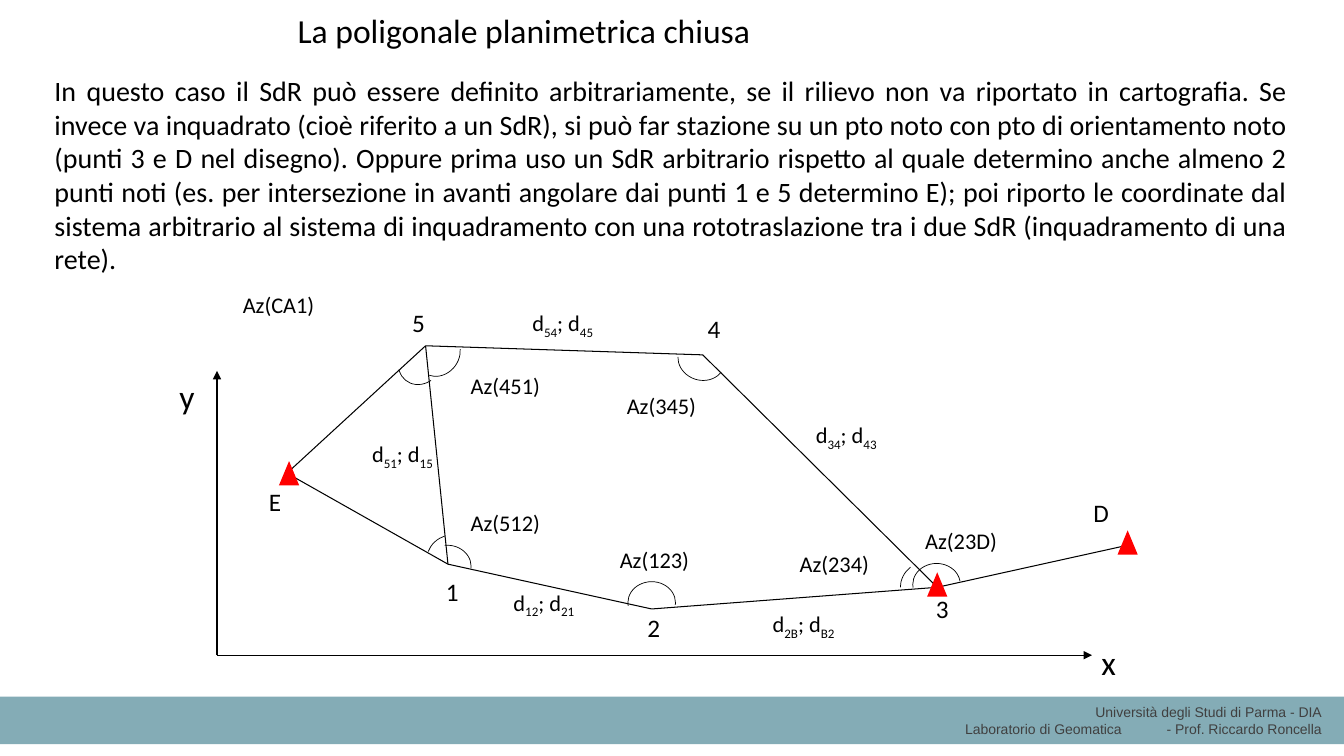
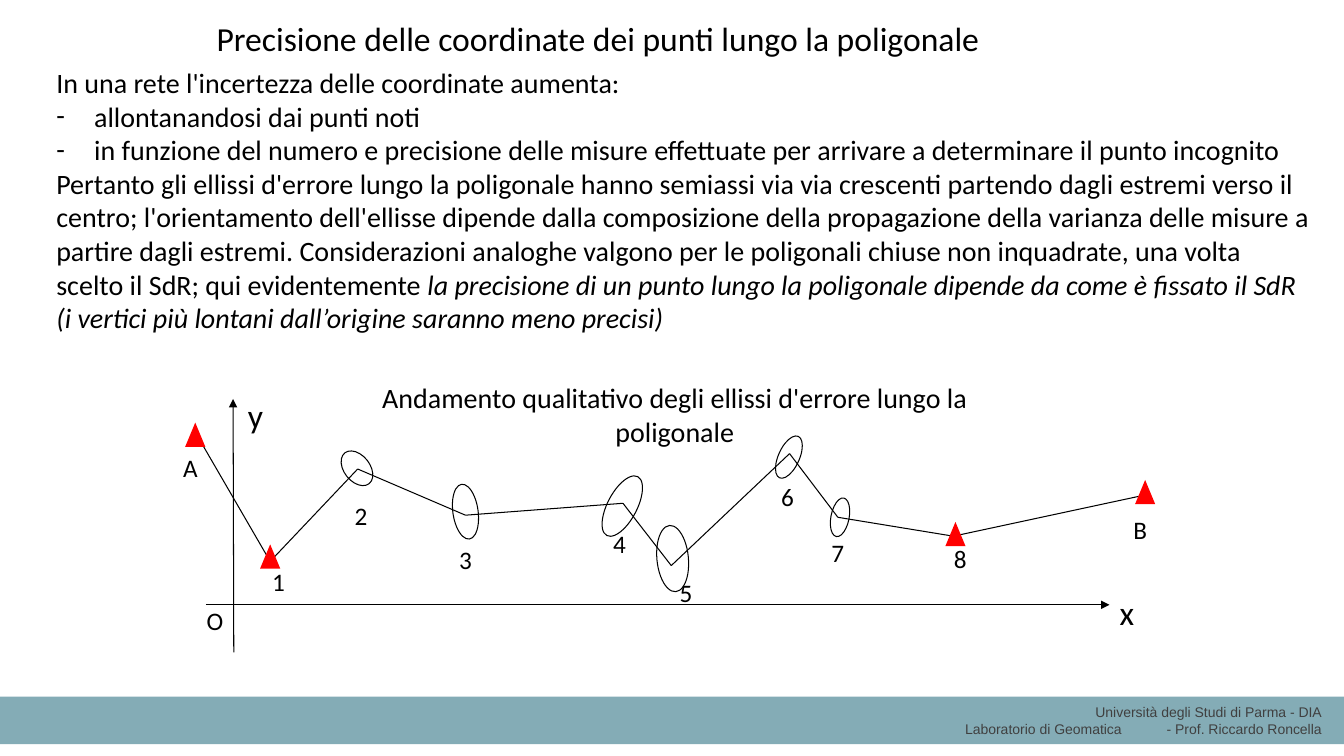
from lxml import etree
from pptx import Presentation
from pptx.dml.color import RGBColor
from pptx.enum import shapes as kinds, text as t
from pptx.oxml.ns import qn
from pptx.util import Pt

BLACK, RED, BAND, GREY = "000000", "FF0000", "84ACB6", "404040"
MAIN_FONT, FOOTER_FONT = "Calibri", "Arial"
WIDTH, HEIGHT = 960, 540
SHAPE = kinds.MSO_SHAPE
LEFT, CENTER = t.PP_ALIGN.LEFT, t.PP_ALIGN.CENTER
RIGHT, JUSTIFY = t.PP_ALIGN.RIGHT, t.PP_ALIGN.JUSTIFY


def rgb(color):
    return RGBColor.from_string(color)


def points(*values):
    return [Pt(value) for value in values]


def add_run(paragraph, words, size, color=BLACK, font=MAIN_FONT, italic=None, subscript=False):
    run = paragraph.add_run()
    run.text = words
    run.font.size, run.font.name, run.font.italic = Pt(size), font, italic
    run.font.color.rgb = rgb(color)
    if subscript:
        run.font._element.set("baseline", "-25000")


def set_indent(paragraph, bullet=None, indent=0):
    """Override the template's list style: hanging bullet, or none."""
    properties = paragraph._p.get_or_add_pPr()
    properties.set("marL", str(Pt(indent)))
    properties.set("indent", str(-Pt(indent)))
    if bullet:
        etree.SubElement(properties, qn("a:buFont")).set("typeface", MAIN_FONT)
        etree.SubElement(properties, qn("a:buChar")).set("char", bullet)
    else:
        etree.SubElement(properties, qn("a:buNone"))


def place(shape, box):
    shape.left, shape.top, shape.width, shape.height = points(*box)


def fill_title(slide, words, box, align):
    title = slide.shapes.title
    place(title, box)
    frame = title.text_frame
    frame.word_wrap, frame.vertical_anchor = False, t.MSO_ANCHOR.TOP
    frame.auto_size = t.MSO_AUTO_SIZE.NONE
    frame.paragraphs[0].alignment = align
    add_run(frame.paragraphs[0], words, 24)


def fill_body(slide, items, box, align):
    """Each item is a bullet (or None) and a list of (words, italic) runs."""
    body = slide.placeholders[1]
    place(body, box)
    frame = body.text_frame
    frame.word_wrap, frame.auto_size = True, t.MSO_AUTO_SIZE.NONE
    for number, (bullet, runs) in enumerate(items):
        paragraph = frame.add_paragraph() if number else frame.paragraphs[0]
        paragraph.space_before = Pt(0)
        set_indent(paragraph, bullet, 27 if bullet else 0)
        paragraph.alignment = align
        for words, italic in runs:
            add_run(paragraph, words, 20, italic=italic)


def add_footer(layout, slide):
    """Build the footer band on a slide and move it into the shared layout."""
    band = slide.shapes.add_shape(SHAPE.RECTANGLE, *points(0, 497.5, WIDTH, 34))
    band.shadow.inherit = False
    band.fill.solid()
    band.fill.fore_color.rgb = rgb(BAND)
    band.line.fill.background()
    credits = slide.shapes.add_textbox(*points(652.3, 499, 298.8, 31.7))
    frame = credits.text_frame
    frame.word_wrap = True
    lines = ["Università degli Studi di Parma - DIA",
             "Laboratorio di Geomatica\t- Prof. Riccardo Roncella"]
    for number, words in enumerate(lines):
        paragraph = frame.add_paragraph() if number else frame.paragraphs[0]
        paragraph.alignment = RIGHT
        add_run(paragraph, words, 10, GREY, FOOTER_FONT)
    for number, shape in enumerate((band, credits)):
        shape.element.nvSpPr.cNvPr.set("id", str(100 + number))
        layout.element.cSld.spTree.append(shape.element)


class Diagram:
    """A group of parts measured from the top left corner of its box."""

    def __init__(self, slide, left, top):
        self.shapes = slide.shapes.add_group_shape().shapes
        self.left, self.top = left, top

    def line(self, start, end, arrow=False):
        ends = [self.left + start[0], self.top + start[1], self.left + end[0], self.top + end[1]]
        line = self.shapes.add_connector(kinds.MSO_CONNECTOR.STRAIGHT, *points(*ends))
        line.line.color.rgb = rgb(BLACK)
        line.line.width = Pt(0.75)
        if arrow:
            etree.SubElement(line.line._get_or_add_ln(), qn("a:tailEnd")).set("type", "triangle")
        etree.SubElement(line.element.spPr, qn("a:effectLst"))

    def centred(self, kind, centre, width, height, rotation=0):
        x, y = self.left + centre[0] - width / 2, self.top + centre[1] - height / 2
        shape = self.shapes.add_shape(kind, *points(x, y, width, height))
        shape.shadow.inherit = False
        shape.rotation = rotation
        return shape

    def outline(self, kind, centre, width, height, rotation, weight):
        shape = self.centred(kind, centre, width, height, rotation)
        shape.fill.background()
        shape.line.color.rgb = rgb(BLACK)
        shape.line.width = Pt(weight)
        return shape

    def ellipse(self, centre, width, height, rotation):
        self.outline(SHAPE.OVAL, centre, width, height, rotation, 0.75)

    def angle(self, centre, rotation, start, end):
        """Arc between two angles in degrees; adjustments count 0.6 a degree."""
        arc = self.outline(SHAPE.ARC, centre, 34, 30, rotation, 0.5)
        arc.adjustments[0], arc.adjustments[1] = start * 0.6, end * 0.6

    def known_point(self, centre):
        triangle = self.centred(SHAPE.ISOSCELES_TRIANGLE, centre, 14.4, 17.3)
        triangle.fill.solid()
        triangle.fill.fore_color.rgb = rgb(RED)
        triangle.line.fill.background()

    def label(self, x, top, *runs, size=18, width=77):
        """Centred text at x; every second run is a subscript."""
        box = self.shapes.add_textbox(
            *points(self.left + x - width / 2, self.top + top, width, size * 1.2 + 7.2))
        frame = box.text_frame
        frame.word_wrap = False
        paragraph = frame.paragraphs[0]
        paragraph.alignment = CENTER
        for number, words in enumerate(runs):
            add_run(paragraph, words, size, subscript=number % 2 == 1)


def draw_closed_traverse(slide, left, top):
    diagram = Diagram(slide, left, top)
    vertices = {"1": (200, 203), "2": (345.5, 235), "3": (549.5, 219.5), "4": (382, 53.5),
                "5": (184, 47), "D": (683, 190), "E": (85, 138)}
    for start, end in ("51", "54", "12", "23", "3D", "34", "5E", "1E"):
        diagram.line(vertices[start], vertices[end])
    for end in ((660, 268), (35, 65)):
        diagram.line((35, 268), end, arrow=True)
    for centre in ((86.5, 138), (549.5, 217.5), (685.5, 187.5)):
        diagram.known_point(centre)
    angles = [((193, 52.5), 126.2, 222.5, 345.8), ((199.5, 204.5), 0, 262.5, 5.3),
              ((345.5, 230.5), 0, 172.1, 5.3), ((549, 217.5), 0, 172.1, 352),
              ((381, 56.5), 199.2, 194.3, 346.3), ((539, 217.5), 309.8, 222.8, 285.3),
              ((201.5, 197.5), 330, 222.8, 285.3), ((180.5, 58.5), 309.8, 111.1, 210.5)]
    for angle in angles:
        diagram.angle(*angle)
    names = [("1", 203, 208), ("2", 347, 233.5), ("3", 553, 220.5), ("4", 390, 20.5),
             ("5", 179, 16), ("D", 666.5, 152), ("E", 76.5, 143.5)]
    for name, x, y in names:
        diagram.label(x, y, name)
    for name, x, y in (("y", 13.5, 65), ("x", 672, 255)):
        diagram.label(x, y, name, size=24)
    azimuths = [("23D", 566.5, 173), ("512", 241, 160), ("123", 347.5, 186.5), ("CA1", 79, 4.5),
                ("234", 476, 189.5), ("345", 352.5, 76.5), ("451", 241, 62)]
    for name, x, y in azimuths:
        diagram.label(x, y, f"Az({name})", size=16)
    distances = [("2B", "B2", 454, 232.5), ("12", "21", 268.5, 217), ("51", "15", 167.5, 111),
                 ("54", "45", 282, 17.5), ("34", "43", 484.5, 97.5)]
    for there, back, x, y in distances:
        diagram.label(x, y, "d", there, "; d", back, size=16)


def draw_error_ellipses(slide, left, top):
    diagram = Diagram(slide, left, top)
    diagram.label(362, 3.5, "Andamento qualitativo degli ellissi d'errore lungo la poligonale",
                  size=20, width=521)
    vertices = [(20.5, 45.5), (73, 136), (135.5, 70), (212.5, 103), (325, 94.5),
                (359.5, 139), (444, 59), (478.5, 104.5), (561, 118), (696, 89)]
    for start, end in zip(vertices, vertices[1:]):
        diagram.line(start, end)
    diagram.line((47, 201), (46.5, 20), arrow=True)
    diagram.line((27, 167), (672.5, 167), arrow=True)
    for centre in ((19.5, 45.5), (73, 132.5), (562.5, 116.5), (698, 86.5)):
        diagram.known_point(centre)
    ellipses = [((135, 69.5), 18.5, 28, -38.3), ((212.5, 100.5), 18, 39.5, -8.1),
                ((324.5, 96.5), 21, 47.5, 27.7), ((360.5, 134), 22.5, 47.5, -5.4),
                ((443.5, 61.5), 15, 32.5, 24.4), ((480, 104.5), 13, 28, 11)]
    for ellipse in ellipses:
        diagram.ellipse(*ellipse)
    names = [("A", 16, 54.5), ("1", 79, 136), ("2", 138, 89), ("3", 212.5, 120),
             ("4", 322.5, 108.5), ("5", 370, 144), ("6", 442.5, 75), ("7", 478.5, 115),
             ("8", 566, 119.5), ("B", 694.5, 98.5), ("O", 33.5, 163.5)]
    for name, x, y in names:
        diagram.label(x, y, name)
    for name, x, y in (("y", 62.5, 13.5), ("x", 685, 154)):
        diagram.label(x, y, name, size=24)


def build_closed_traverse(slide):
    fill_title(slide, "La poligonale planimetrica chiusa", (203, 3.5, 342.5, 36.5), CENTER)
    words = (
        "In questo caso il SdR può essere definito arbitrariamente, se il rilievo non va riportato "
        "in cartografia. Se invece va inquadrato (cioè riferito a un SdR), si può far stazione su "
        "un pto noto con pto di orientamento noto (punti 3 e D nel disegno). Oppure prima uso un "
        "SdR arbitrario rispetto al quale determino anche almeno 2 punti noti (es. per "
        "intersezione in avanti angolare dai punti 1 e 5 determino E); poi riporto le coordinate "
        "dal sistema arbitrario al sistema di inquadramento con una rototraslazione tra i due SdR "
        "(inquadramento di una rete).")
    fill_body(slide, [(None, [(words, None)])], (31.7, 49, 895, 152), JUSTIFY)
    draw_closed_traverse(slide, 120, 200)


def build_error_ellipses(slide):
    fill_title(slide, "Precisione delle coordinate dei punti lungo la poligonale",
               (147.5, 9.5, 561, 36.5), LEFT)
    items = [
        (None, [("In una rete l'incertezza delle coordinate aumenta:", None)]),
        ("-", [("allontanandosi dai punti noti", None)]),
        ("-", [("in funzione del numero e precisione delle misure effettuate per arrivare a "
                "determinare il punto incognito", None)]),
        (None, [("Pertanto gli ellissi d'errore lungo la poligonale hanno semiassi via via "
                 "crescenti partendo dagli estremi verso il centro; l'orientamento dell'ellisse "
                 "dipende dalla composizione della propagazione della varianza delle misure a "
                 "partire dagli estremi. Considerazioni analoghe valgono per le poligonali chiuse "
                 "non inquadrate, una volta scelto il SdR; qui evidentemente ", None),
                ("la precisione di un punto lungo la poligonale dipende da come è fissato il SdR "
                 "(i vertici più lontani dall’origine saranno meno precisi)", True)]),
    ]
    fill_body(slide, items, (33, 43.2, 910.4, 201), LEFT)
    draw_error_ellipses(slide, 120, 265)


def main():
    presentation = Presentation()
    presentation.slide_width, presentation.slide_height = points(WIDTH, HEIGHT)
    layout = presentation.slide_layouts[1]
    for number, build in enumerate((build_closed_traverse, build_error_ellipses)):
        slide = presentation.slides.add_slide(layout)
        if number == 0:
            add_footer(layout, slide)
        build(slide)
    presentation.save("out.pptx")


if __name__ == "__main__":
    main()
